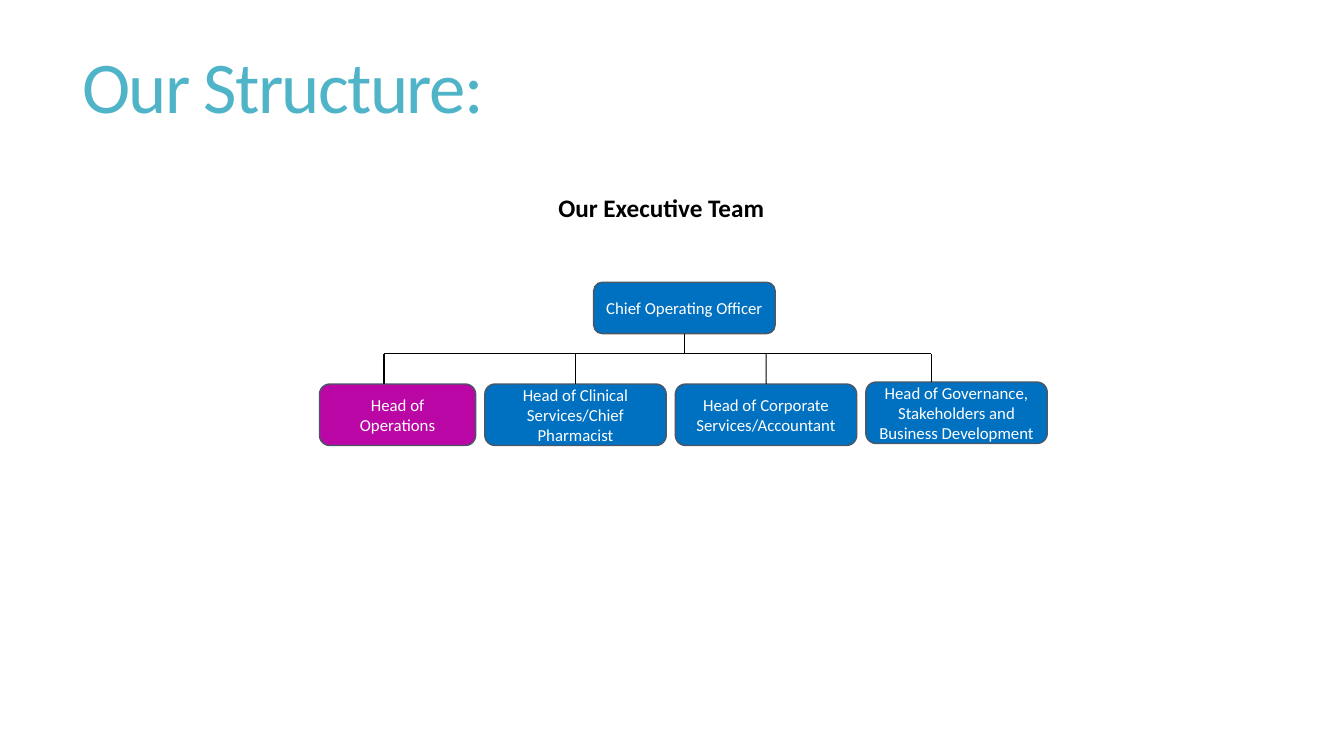
from pptx import Presentation
from pptx.dml.color import RGBColor
from pptx.enum.shapes import MSO_CONNECTOR, MSO_SHAPE
from pptx.enum.text import MSO_ANCHOR, PP_ALIGN
from pptx.oxml.ns import qn
from pptx.util import Pt
from lxml.etree import SubElement

COLORS = {"title": "50B4C8", "text": "000000", "blue": "0070C0",
          "pink": "BA06A5", "edge": "4B5765", "white": "FFFFFF"}
FONT = "Calibri"
TITLE = "Our Structure:"
TEAM = "Our Executive Team"
CHIEF = "Chief Operating Officer"
HEADS = [
    {"text": "Head of Operations", "fill": "pink", "width": 111.6, "top": 274.3, "drop": 274.3},
    {"text": "Head of Clinical Services/Chief Pharmacist", "fill": "blue", "width": 129.6, "top": 274.3},
    {"text": "Head of Corporate Services/Accountant", "fill": "blue", "width": 129.6, "top": 274.3},
    {"text": "Head of Governance, Stakeholders and Business Development", "fill": "blue",
     "width": 129.6, "top": 272.9, "drop": 665.3},
]
LEFT, GAP, HIGH, BAR = 228.2, 6.5, 43.9, 252.7

deck = Presentation()
deck.slide_width, deck.slide_height = Pt(960), Pt(540)
slide = deck.slides.add_slide(deck.slide_layouts[6])


def color(name):
    return RGBColor.from_string(COLORS[name])


def write(shape, text, size, tint, anchor, align=PP_ALIGN.LEFT, bold=False):
    frame = shape.text_frame
    frame.word_wrap = True
    frame.vertical_anchor = anchor
    para = frame.paragraphs[0]
    para.text = text
    para.alignment = align
    font = para.font
    font.name, font.size, font.bold = FONT, Pt(size), bold
    font.color.rgb = color(tint)
    return para


def label(text, left, top, width, height, *style, **more):
    box = slide.shapes.add_textbox(Pt(left), Pt(top), Pt(width), Pt(height))
    return write(box, text, *style, **more)


def role(text, left, top, width, height, fill):
    box = slide.shapes.add_shape(MSO_SHAPE.ROUNDED_RECTANGLE, Pt(left), Pt(top), Pt(width), Pt(height))
    box.shadow.inherit = False
    box.fill.solid()
    box.fill.fore_color.rgb = color(fill)
    box.line.color.rgb = color("edge")
    box.line.width = Pt(1)
    write(box, text, 12, "white", MSO_ANCHOR.MIDDLE, PP_ALIGN.CENTER)
    return box


def link(x1, y1, x2, y2):
    line = slide.shapes.add_connector(MSO_CONNECTOR.STRAIGHT, Pt(x1), Pt(y1), Pt(x2), Pt(y2))
    line.line.color.rgb = color("text")
    line.line.width = Pt(0.75)
    SubElement(line._element.spPr, qn("a:effectLst"))
    return line


title = label(TITLE, 51.8, 0, 848.2, 130.3, 52, "title", MSO_ANCHOR.MIDDLE)
title.line_spacing = 0.85
title.runs[0]._r.get_or_add_rPr().set("spc", "-120")
label(TEAM, 391.7, 133.9, 365.8, 28.8, 18, "text", MSO_ANCHOR.TOP, bold=True)

chief = role(CHIEF, 424.1, 201.6, 129.6, 36.7, "blue")
mid = 424.1 + 129.6 / 2
link(mid, 238.3, mid, BAR).begin_connect(chief, 2)

left, drops = LEFT, []
for head in HEADS:
    width, top = head["width"], head["top"]
    box = role(head["text"], left, top, width, HIGH, head["fill"])
    drop = head.get("drop", left + width / 2)
    line = link(drop, BAR, drop, top)
    if "drop" not in head:
        line.end_connect(box, 0)
    drops.append(drop)
    left += width + GAP
link(drops[0], BAR, drops[-1], BAR)

deck.save("out.pptx")
